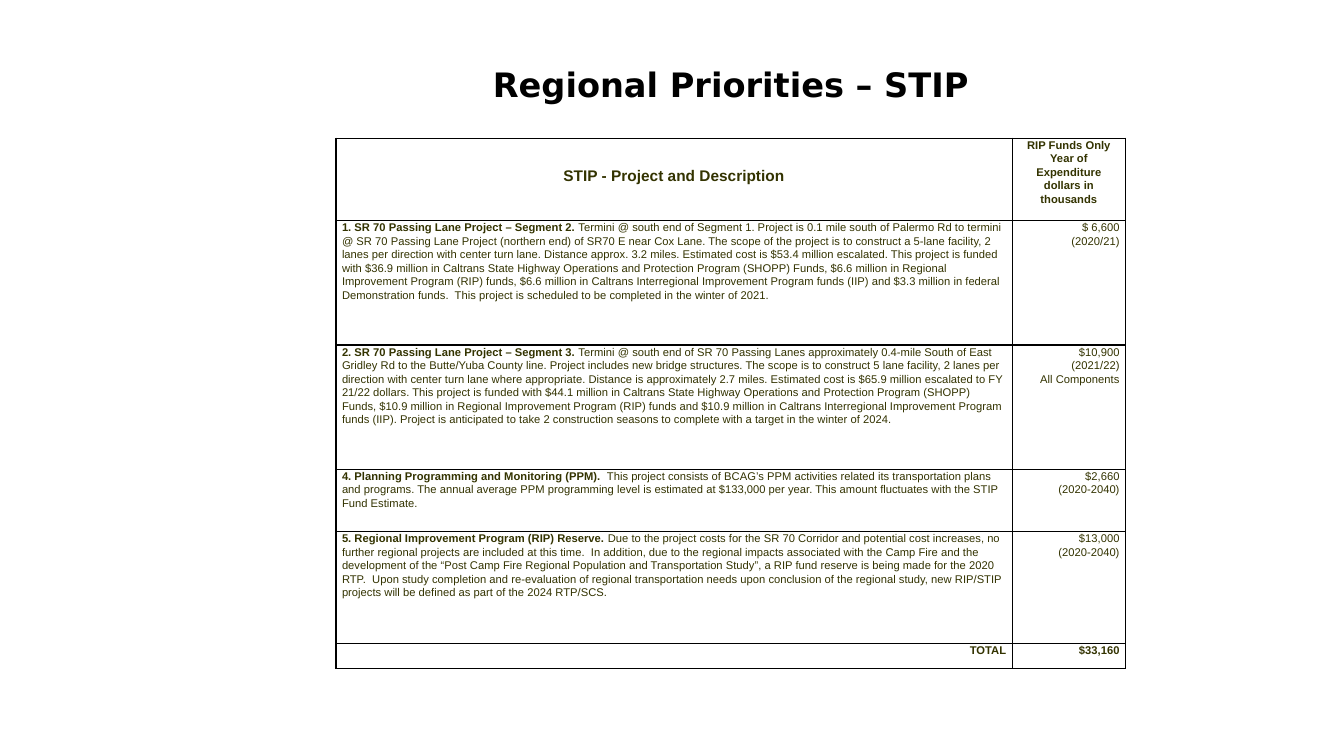
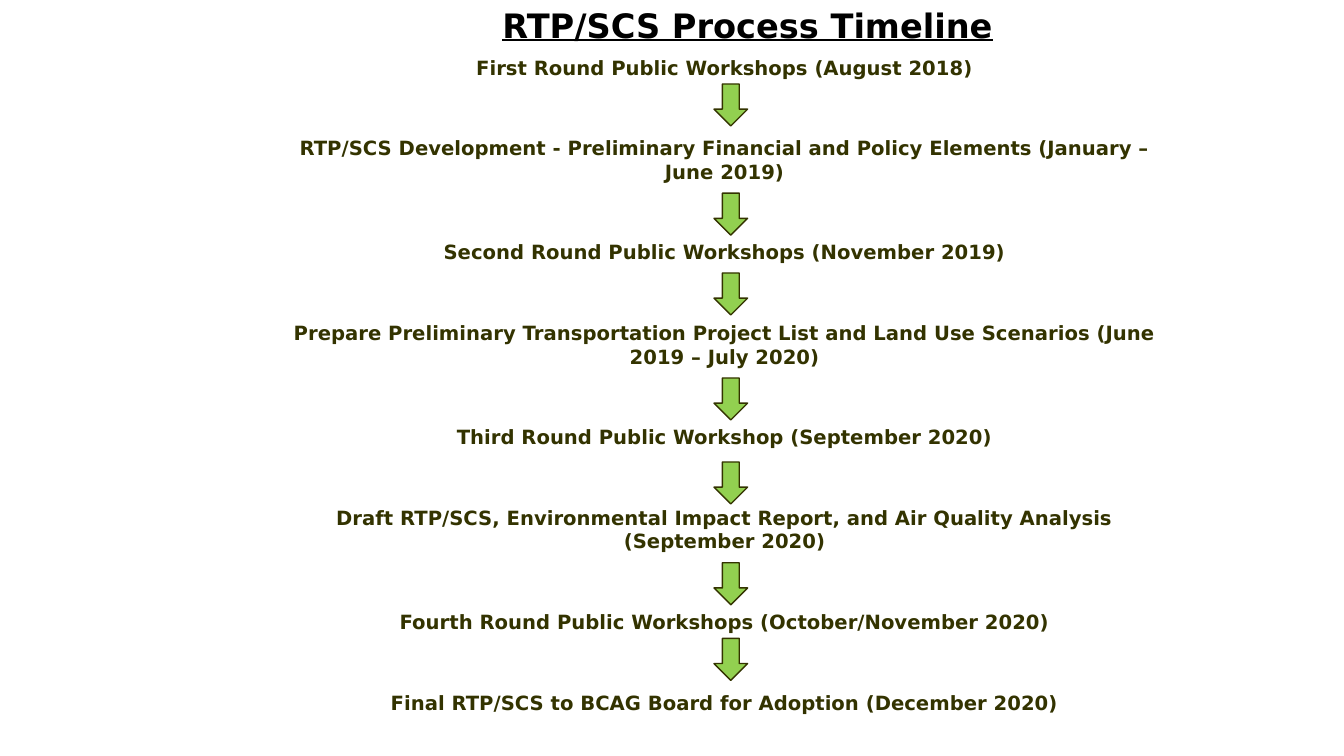
from itertools import product

from lxml.etree import SubElement
from pptx import Presentation
from pptx.dml.color import RGBColor
from pptx.enum.shapes import MSO_SHAPE
from pptx.enum.text import MSO_ANCHOR, MSO_AUTO_SIZE, PP_ALIGN
from pptx.oxml.ns import qn
from pptx.util import Pt

BLACK = RGBColor(0x00, 0x00, 0x00)
OLIVE = RGBColor(0x33, 0x33, 0x00)
GREEN = RGBColor(0x92, 0xD0, 0x50)

TITLE = dict(name="DejaVu Sans", size=Pt(24), bold=True)
STEP = dict(name="DejaVu Sans", size=Pt(14), bold=True)
CELL = dict(name="Arial", size=Pt(8), bold=False)
CELL_BOLD = CELL | dict(bold=True)
CELL_HEAD = CELL_BOLD | dict(size=Pt(11))

COLUMNS = [483, 81]
ROWS = [59, 88.75, 88.75, 44.5, 80, 18]
HEAD_LEFT = "STIP - Project and Description"
HEAD_RIGHT = ["RIP Funds Only", "Year of Expenditure dollars in thousands"]
PROJECTS = [
    ("1. SR 70 Passing Lane Project – Segment 2. ",
     "Termini @ south end of Segment 1. Project is 0.1 mile south of Palermo Rd to termini "
     "@ SR 70 Passing Lane Project (northern end) of SR70 E near Cox Lane. The scope of the "
     "project is to construct a 5-lane facility, 2 lanes per direction with center turn lane. "
     "Distance approx. 3.2 miles. Estimated cost is $53.4 million escalated. This project is "
     "funded with $36.9 million in Caltrans State Highway Operations and Protection Program "
     "(SHOPP) Funds, $6.6 million in Regional Improvement Program (RIP) funds, $6.6 million in "
     "Caltrans Interregional Improvement Program funds (IIP) and $3.3 million in federal "
     "Demonstration funds.  This project is scheduled to be completed in the winter of 2021.",
     ["$ 6,600", "(2020/21)"]),
    ("2. SR 70 Passing Lane Project – Segment 3. ",
     "Termini @ south end of SR 70 Passing Lanes approximately 0.4-mile South of East Gridley "
     "Rd to the Butte/Yuba County line. Project includes new bridge structures. The scope is "
     "to construct 5 lane facility, 2 lanes per direction with center turn lane where "
     "appropriate. Distance is approximately 2.7 miles. Estimated cost is $65.9 million "
     "escalated to FY 21/22 dollars. This project is funded with $44.1 million in Caltrans "
     "State Highway Operations and Protection Program (SHOPP) Funds, $10.9 million in Regional "
     "Improvement Program (RIP) funds and $10.9 million in Caltrans Interregional Improvement "
     "Program funds (IIP). Project is anticipated to take 2 construction seasons to complete "
     "with a target in the winter of 2024.",
     ["$10,900", "(2021/22)", "All Components"]),
    ("4. Planning Programming and Monitoring (PPM).",
     "  This project consists of BCAG’s PPM activities related its transportation plans and "
     "programs. The annual average PPM programming level is estimated at $133,000 per year. "
     "This amount fluctuates with the STIP Fund Estimate.",
     ["$2,660", "(2020-2040)"]),
    ("5. Regional Improvement Program (RIP) Reserve.",
     " Due to the project costs for the SR 70 Corridor and potential cost increases, no "
     "further regional projects are included at this time.  In addition, due to the regional "
     "impacts associated with the Camp Fire and the development of the “Post Camp Fire "
     "Regional Population and Transportation Study”, a RIP fund reserve is being made for the "
     "2020 RTP.  Upon study completion and re-evaluation of regional transportation needs upon "
     "conclusion of the regional study, new RIP/STIP projects will be defined as part of the "
     "2024 RTP/SCS.",
     ["$13,000", "(2020-2040)"]),
]
STEPS = [
    "First Round Public Workshops (August 2018)",
    "RTP/SCS Development - Preliminary Financial and Policy Elements (January – June 2019)",
    "Second Round Public Workshops (November 2019)",
    "Prepare Preliminary Transportation Project List and Land Use Scenarios (June 2019 – July 2020)",
    "Third Round Public Workshop (September 2020)",
    "Draft RTP/SCS, Environmental Impact Report, and Air Quality Analysis (September 2020)",
    "Fourth Round Public Workshops (October/November 2020)",
    "Final RTP/SCS to BCAG Board for Adoption (December 2020)",
]
ARROW_TOPS = [24, 102, 159, 234, 294, 366, 420]


def set_attrs(obj, values):
    """Set each attribute of an object from a dict."""
    for key, value in values.items():
        setattr(obj, key, value)


def add_run(p, text, fmt, color=OLIVE):
    """Append a formatted run to a paragraph."""
    r = p.add_run()
    r.text = text
    set_attrs(r.font, fmt)
    r.font.color.rgb = color


def place(sp, box, anchor):
    """Move a placeholder to a box and fix its frame."""
    set_attrs(sp, dict(zip(("left", "top", "width", "height"), map(Pt, box))))
    set_attrs(sp.text_frame, dict(word_wrap=True, auto_size=MSO_AUTO_SIZE.NONE,
                                  vertical_anchor=anchor))
    return sp.text_frame


def add_title(s, text, box, underline=False):
    """Fill the title placeholder."""
    p = place(s.shapes.title, box, MSO_ANCHOR.BOTTOM).paragraphs[0]
    p.alignment = PP_ALIGN.CENTER
    add_run(p, text, TITLE | dict(underline=underline), BLACK)


def fill_cell(cell, lines, align):
    """Write lines, each a list of (text, format) runs, into a bordered cell."""
    set_attrs(cell, dict(margin_left=Pt(4.3), margin_right=Pt(4.3),
                         margin_top=0, margin_bottom=0))
    tf = cell.text_frame
    for i, runs in enumerate(lines):
        p = tf.add_paragraph() if i else tf.paragraphs[0]
        set_attrs(p, dict(alignment=align, line_spacing=1.07))
        for text, fmt in runs:
            add_run(p, text, fmt)
    tc_pr = cell._tc.get_or_add_tcPr()
    for side in ("a:lnL", "a:lnR", "a:lnT", "a:lnB"):
        ln = SubElement(tc_pr, qn(side), w=str(Pt(1)))
        SubElement(SubElement(ln, qn("a:solidFill")), qn("a:srgbClr"), val=str(BLACK))
    cell.fill.background()


def add_funding_table(s, left, top):
    """Draw the table of projects and funds."""
    table = s.shapes.add_table(len(ROWS), len(COLUMNS), Pt(left), Pt(top),
                               Pt(sum(COLUMNS)), Pt(sum(ROWS))).table
    set_attrs(table, dict(first_row=False, horz_banding=False))
    for column, width in zip(table.columns, COLUMNS):
        column.width = Pt(width)
    for row, height in zip(table.rows, ROWS):
        row.height = Pt(height)
    center, right = PP_ALIGN.CENTER, PP_ALIGN.RIGHT
    cells = [([[(HEAD_LEFT, CELL_HEAD)]], center),
             ([[(line, CELL_BOLD)] for line in HEAD_RIGHT], center)]
    for name, text, funds in PROJECTS:
        cells += [([[(name, CELL_BOLD), (text, CELL)]], PP_ALIGN.LEFT),
                  ([[(line, CELL)] for line in funds], right)]
    cells += [([[(text, CELL_BOLD)]], right) for text in ("TOTAL", "$33,160")]
    grid = product(range(len(ROWS)), range(len(COLUMNS)))
    for (row, col), (lines, align) in zip(grid, cells):
        fill_cell(table.cell(row, col), lines, align)
    table.cell(0, 0).margin_top = Pt(20)


def add_steps(s, box):
    """Fill the body placeholder with steps and draw the arrows between them."""
    tf = place(s.placeholders[1], box, MSO_ANCHOR.TOP)
    for i, step in enumerate(STEPS):
        p = tf.add_paragraph() if i else tf.paragraphs[0]
        p_pr = p._p.get_or_add_pPr()
        p_pr.set("marL", str(Pt(27)))
        p_pr.set("indent", "0")
        SubElement(p_pr, qn("a:buNone"))
        set_attrs(p, dict(alignment=PP_ALIGN.CENTER, line_spacing=1.0,
                          space_before=Pt(40.8 if i else 0)))
        add_run(p, step, STEP)
    left, top, _, _ = box
    for offset in ARROW_TOPS:
        sp = s.shapes.add_shape(MSO_SHAPE.DOWN_ARROW, Pt(left + 342), Pt(top + offset),
                                Pt(24), Pt(30))
        sp.shadow.inherit = False
        sp.fill.solid()
        sp.fill.fore_color.rgb = GREEN
        sp.line.color.rgb = OLIVE
        sp.line.width = Pt(1)


def priorities_slide(prs):
    """Build the slide of regional priorities."""
    s = prs.slides.add_slide(prs.slide_layouts[5])
    add_title(s, "Regional Priorities – STIP", (264, 36, 516, 42))
    add_funding_table(s, 240, 98.75)


def timeline_slide(prs):
    """Build the slide of the process timeline."""
    s = prs.slides.add_slide(prs.slide_layouts[1])
    add_title(s, "RTP/SCS Process Timeline", (276, -6, 516, 42), underline=True)
    add_steps(s, (168, 36, 672, 494.5))


def main():
    """Build and save the presentation."""
    prs = Presentation()
    set_attrs(prs, dict(slide_width=Pt(960), slide_height=Pt(540)))
    priorities_slide(prs)
    timeline_slide(prs)
    prs.save("out.pptx")


if __name__ == "__main__":
    main()
